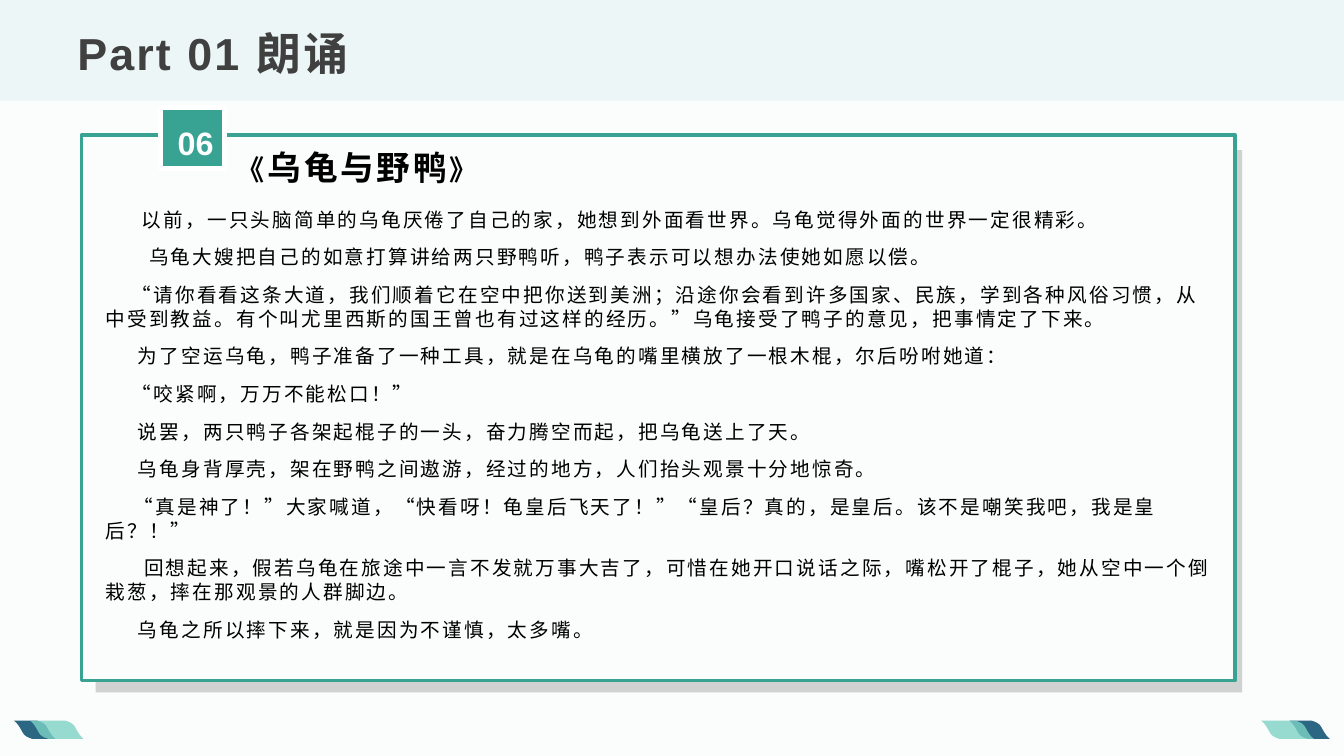
"""Build the recital slide with the fable of the tortoise and the wild ducks."""
from dataclasses import dataclass
from lxml import etree
from pptx import Presentation
from pptx import util as u
from pptx.dml import color as dml
from pptx.enum import shapes, text
from pptx.oxml import ns

HUES = {"paper": "FBFCFC", "band": "EDF6F7", "teal": "38A293", "shade": "BFBFBF",
        "navy": "2B6782", "mint": "7DD2C6", "white": "FFFFFF", "ink": "000000",
        "title": "404040"}
LATIN, HAN = "Arial", "Noto Sans CJK SC"


@dataclass
class Panel:
    at: tuple[float, float, float, float]
    fill: str
    line: str = ""
    width: float = 0
    alpha: int = 100


@dataclass
class Leaf:
    left: float
    width: float
    fill: str
    alpha: int = 100


@dataclass
class Run:
    words: str
    size: float
    hue: str = "ink"
    bold: bool = True
    space: float = 0
    face: str = LATIN


@dataclass
class Para:
    runs: list[Run]
    form: dict
    indent: float = 0


@dataclass
class Box:
    at: tuple[float, float, float, float]
    paras: list[Para]
    form: dict


PANELS = [
    Panel((0.95, 1.49, 11.37, 5.38), "shade", alpha=70),
    Panel((0.81, 1.34, 11.44, 5.41), "paper", "teal", 2.5),
    Panel((0, 0, 13.33, 1), "band"),
]
BADGE = Panel((1.59, 1.07, 0.64, 0.6), "teal", "white", 3.5)
LEAVES = [
    Leaf(0.14, 0.41, "navy"), Leaf(0.3, 0.53, "mint", 80),
    Leaf(12.79, 0.4, "navy"), Leaf(12.51, 0.52, "mint", 80),
]
STORY = [
    (0.36, "以前，一只头脑简单的乌龟厌倦了自己的家，她想到外面看世界。乌龟觉得外面的世界一定很精彩。"),
    (0.43, "乌龟大嫂把自己的如意打算讲给两只野鸭听，鸭子表示可以想办法使她如愿以偿。"),
    (0.26, "“请你看看这条大道，我们顺着它在空中把你送到美洲；沿途你会看到许多国家、民族，学到各种风俗习惯，"
           "从中受到教益。有个叫尤里西斯的国王曾也有过这样的经历。”乌龟接受了鸭子的意见，把事情定了下来。"),
    (0.32, "为了空运乌龟，鸭子准备了一种工具，就是在乌龟的嘴里横放了一根木棍，尔后吩咐她道："),
    (0.26, "“咬紧啊，万万不能松口！”"),
    (0.32, "说罢，两只鸭子各架起棍子的一头，奋力腾空而起，把乌龟送上了天。"),
    (0.32, "乌龟身背厚壳，架在野鸭之间遨游，经过的地方，人们抬头观景十分地惊奇。"),
    (0.28, "“真是神了！”大家喊道，“快看呀！龟皇后飞天了！”“皇后？真的，是皇后。该不是嘲笑我吧，我是皇后？！”"),
    (0.38, "回想起来，假若乌龟在旅途中一言不发就万事大吉了，可惜在她开口说话之际，嘴松开了棍子，"
           "她从空中一个倒栽葱，摔在那观景的人群脚边。"),
    (0.32, "乌龟之所以摔下来，就是因为不谨慎，太多嘴。"),
]
LOW = text.MSO_ANCHOR.BOTTOM
BOXES = [
    Box((0.95, 2.06, 11.18, 4.83),
        [Para([Run(words, 14, bold=False, space=1.5)],
              {"line_spacing": u.Pt(16.9), "space_after": u.Pt(10)}, indent)
         for indent, words in STORY],
        {"margin_top": 0}),
    Box((2.25, 1.33, 4.5, 0.53),
        [Para([Run("《", 20, space=2), Run("乌龟与野鸭", 24, space=2, face=HAN),
               Run("》", 20, space=2)], {"line_spacing": 1.2})],
        {"margin_bottom": 0, "vertical_anchor": LOW}),
    Box((0.67, 0.17, 12, 0.67),
        [Para([Run("Part 01 朗诵", 32, "title", space=1.5)], {})],
        {"vertical_anchor": LOW}),
]
LABEL = Box((1.65, 1.13, 0.58, 0.64),
            [Para([Run("06", 23.1, "white")],
                  {"alignment": text.PP_ALIGN.CENTER, "line_spacing": 1.1})], {})


def tint(name: str) -> dml.RGBColor:
    return dml.RGBColor.from_string(HUES[name])


def apply(item, form: dict) -> None:
    for key, value in form.items():
        setattr(item, key, value)


def paint(shape, fill: str, alpha: int) -> None:
    shape.shadow.inherit = False
    shape.fill.solid()
    shape.fill.fore_color.rgb = tint(fill)
    if alpha < 100:
        node = shape.fill._xPr.find(".//" + ns.qn("a:srgbClr"))
        etree.SubElement(node, ns.qn("a:alpha"), val=str(alpha * 1000))


def draw_panel(slide, panel: Panel) -> None:
    shape = slide.shapes.add_shape(shapes.MSO_SHAPE.RECTANGLE, *map(u.Inches, panel.at))
    paint(shape, panel.fill, panel.alpha)
    if panel.line:
        apply(shape.line, {"width": u.Pt(panel.width)})
        shape.line.color.rgb = tint(panel.line)
    else:
        shape.line.fill.background()


def curve(ends: list[tuple[float, float]], steps: int = 8) -> list[tuple[float, float]]:
    out = []
    for i in range(1, steps + 1):
        t = i / steps
        parts = ((1 - t) ** 3, 3 * t * (1 - t) ** 2, 3 * t * t * (1 - t), t ** 3)
        out.append(tuple(sum(k * p[a] for k, p in zip(parts, ends)) for a in (0, 1)))
    return out


def draw_leaf(slide, leaf: Leaf, top: float = 7.15, high: float = 0.18) -> None:
    w = leaf.width
    knee, bend, tip = (w - 0.18, 0), (w - 0.07, 0.09), (w, high)
    half = [knee] + curve([knee, (w - 0.12, 0.02), (w - 0.1, 0.03), bend])
    half += curve([bend, (w - 0.04, 0.15), tip, tip])
    ring = half + [(w - x, high - y) for x, y in half]
    dots = [(round((leaf.left + x) * 1000), round((top + y) * 1000)) for x, y in ring]
    pen = slide.shapes.build_freeform(*dots[0], scale=u.Inches(1) / 1000)
    pen.add_line_segments(dots[1:], close=True)
    shape = pen.convert_to_shape()
    paint(shape, leaf.fill, leaf.alpha)
    shape.line.fill.background()


def add_run(para, run: Run) -> None:
    item = para.add_run()
    item.text = run.words
    item.font.color.rgb = tint(run.hue)
    apply(item.font, {"size": u.Pt(run.size), "bold": run.bold, "name": run.face})
    props = item.font._element
    etree.SubElement(props, ns.qn("a:ea"), typeface=HAN)
    if run.space:
        props.set("spc", str(round(run.space * 100)))


def draw_box(slide, box: Box) -> None:
    frame = slide.shapes.add_textbox(*map(u.Inches, box.at)).text_frame
    apply(frame, {"word_wrap": True, **box.form})
    for i, para in enumerate(box.paras):
        item = frame.add_paragraph() if i else frame.paragraphs[0]
        apply(item, para.form)
        if para.indent:
            item._p.get_or_add_pPr().set("indent", str(u.Inches(para.indent)))
        for run in para.runs:
            add_run(item, run)


def main() -> None:
    deck = Presentation()
    apply(deck, {"slide_width": u.Inches(13.33), "slide_height": u.Inches(7.5)})
    slide = deck.slides.add_slide(deck.slide_layouts[6])
    slide.background.fill.solid()
    slide.background.fill.fore_color.rgb = tint("paper")
    for panel in PANELS:
        draw_panel(slide, panel)
    for leaf in LEAVES:
        draw_leaf(slide, leaf)
    for box in BOXES:
        draw_box(slide, box)
    draw_panel(slide, BADGE)
    draw_box(slide, LABEL)
    deck.save("out.pptx")


if __name__ == "__main__":
    main()
